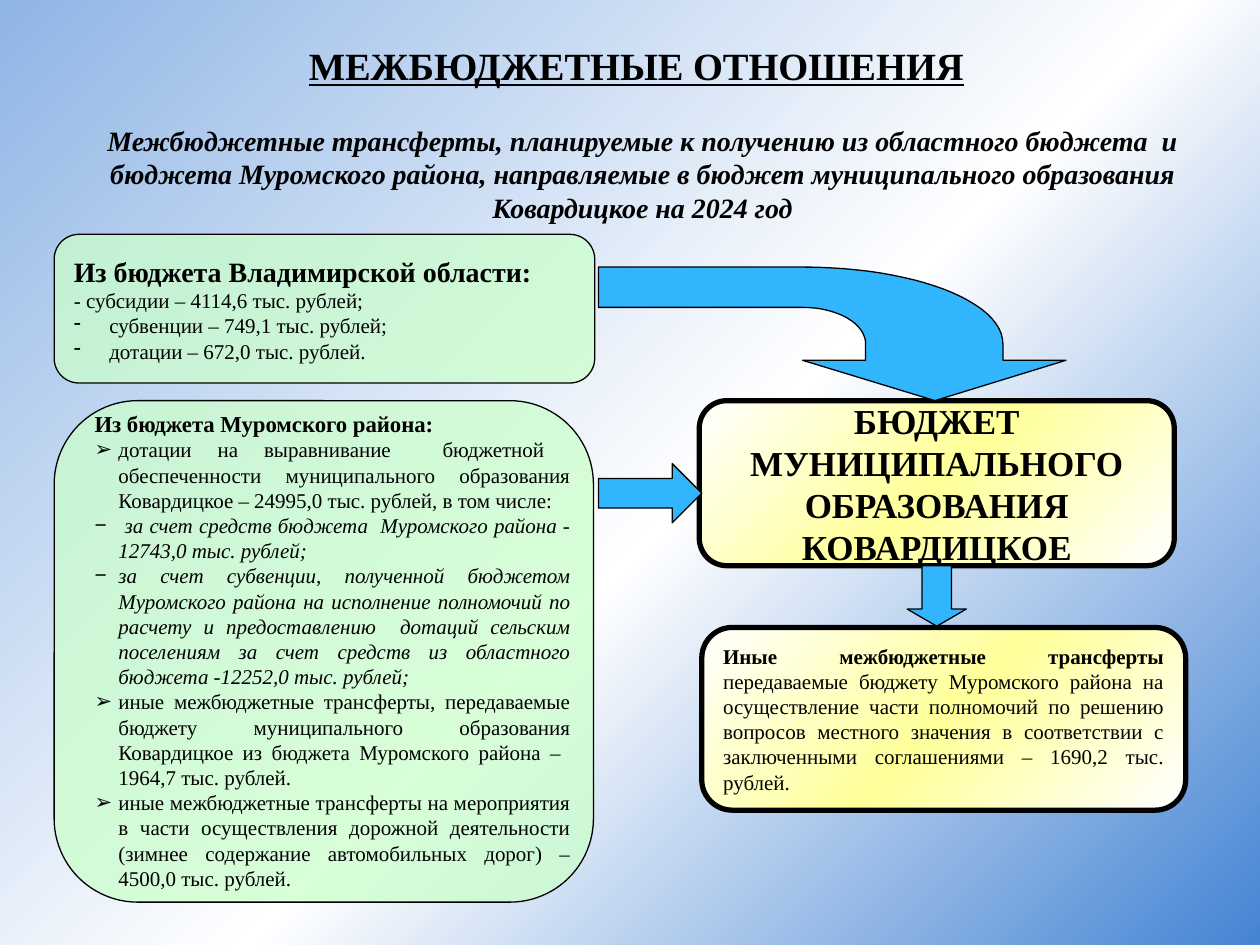
import copy
from dataclasses import dataclass

import pptx
import pptx.util
import pptx.dml.color
import pptx.enum.shapes
import pptx.enum.text
import pptx.oxml.ns
import pptx.oxml.xmlchemy

COLORS = {
    "ink": "000000", "arrow": "31B6FD", "mint": "CCFFCC", "white": "FFFFFF",
    "yellow": "FFFF99", "sky": "8FB5E5", "blue": "4584D3",
}
FONT = "Times New Roman"
COLUMNS, ROWS = 100, 75
CELL = pptx.util.Inches(10) // COLUMNS
PATH_STEPS = 100  # freeform units in one grid cell

SHAPE = pptx.enum.shapes.MSO_SHAPE
ALIGN = pptx.enum.text.PP_ALIGN
MIDDLE = pptx.enum.text.MSO_ANCHOR.MIDDLE
TOP = pptx.enum.text.MSO_ANCHOR.TOP


@dataclass
class Area:
    column: float
    row: float
    columns: float
    rows: float

    def emu(self) -> list[int]:
        return [round(v * CELL) for v in (self.column, self.row, self.columns, self.rows)]


@dataclass
class Para:
    runs: list[tuple[str, str]]  # text and style letters: b, i, u
    size: float = 12
    align: int = ALIGN.LEFT
    bullet: str = ""
    indent: float = 1.9  # grid columns


def rgb(name: str) -> pptx.dml.color.RGBColor:
    return pptx.dml.color.RGBColor.from_string(COLORS[name])


def write(frame, paras: list[Para], anchor=TOP) -> None:
    frame.word_wrap = True
    frame.auto_size = pptx.enum.text.MSO_AUTO_SIZE.NONE
    frame.vertical_anchor = anchor
    for index, para in enumerate(paras):
        line = frame.add_paragraph() if index else frame.paragraphs[0]
        line.alignment = para.align
        line.space_before = pptx.util.Pt(0)
        set_bullet(line, para)
        for text, style in para.runs:
            run = line.add_run()
            run.text = text
            run.font.name, run.font.size = FONT, pptx.util.Pt(para.size)
            run.font.bold, run.font.italic = "b" in style, "i" in style
            run.font.underline = "u" in style
            run.font.color.rgb = rgb("ink")


def set_bullet(line, para: Para) -> None:
    props = line._p.get_or_add_pPr()
    margin = round(para.indent * CELL) if para.bullet else 0
    props.set("marL", str(margin))
    props.set("indent", str(-margin))
    mark = pptx.oxml.xmlchemy.OxmlElement("a:buChar" if para.bullet else "a:buNone")
    if para.bullet:
        mark.set("char", para.bullet)
    props.append(mark)


def fill_gradient(fill, element, names: list[str], middle: float) -> None:
    """Three-stop diagonal gradient."""
    fill.gradient()
    fill.gradient_angle = 315
    first = next(element.iter(pptx.oxml.ns.qn("a:gs")))
    first.addnext(copy.deepcopy(first))
    for stop, name, position in zip(fill.gradient_stops, names, (0, middle, 1)):
        stop.color.rgb, stop.position = rgb(name), position


def fill_solid(shape, name: str, opacity: int = 100) -> None:
    shape.fill.solid()
    shape.fill.fore_color.rgb = rgb(name)
    if opacity < 100:
        color = next(shape.element.iter(pptx.oxml.ns.qn("a:srgbClr")))
        alpha = pptx.oxml.xmlchemy.OxmlElement("a:alpha")
        alpha.set("val", str(opacity * 1000))
        color.append(alpha)


def outline(shape, width: float) -> None:
    shape.shadow.inherit = False
    shape.line.color.rgb = rgb("ink")
    shape.line.width = pptx.util.Pt(width)


def add_source(slide, area: Area):
    card = slide.shapes.add_shape(SHAPE.FLOWCHART_ALTERNATE_PROCESS, *area.emu())
    fill_solid(card, "mint", 74)
    outline(card, 0.75)
    return card


def add_budget(slide, area: Area, para: Para) -> None:
    card = slide.shapes.add_shape(SHAPE.FLOWCHART_ALTERNATE_PROCESS, *area.emu())
    fill_gradient(card.fill, card.element, ["white", "yellow", "white"], 0.5)
    outline(card, 3)
    write(card.text_frame, [para], MIDDLE)


def add_arrow(slide, kind, area: Area, head: float) -> None:
    arrow = slide.shapes.add_shape(kind, *area.emu())
    arrow.adjustments[0], arrow.adjustments[1] = 0.5, head
    fill_solid(arrow, "arrow")
    outline(arrow, 0.75)


def curve(start, control1, control2, end, steps: int = 24) -> list[tuple[float, float]]:
    def at(t: float, axis: int) -> float:
        u = 1 - t
        return (u**3 * start[axis] + 3 * u * u * t * control1[axis]
                + 3 * u * t * t * control2[axis] + t**3 * end[axis])
    return [(at(i / steps, 0), at(i / steps, 1)) for i in range(steps + 1)]


def add_bent_arrow(slide) -> None:
    outer = curve((79.6, 27.3), (79.6, 23.9), (72.5, 21.2), (63.7, 21.2))
    inner = curve((63.7, 24.4), (66.5, 24.4), (68.7, 25.7), (68.7, 27.3))
    points = [(74.2, 31.8), (84.6, 28.6), (79.6, 28.6), *outer, (47.5, 21.2),
              (47.5, 24.4), *inner, (68.7, 28.6), (63.7, 28.6)]
    scaled = [(x * PATH_STEPS, y * PATH_STEPS) for x, y in points]
    builder = slide.shapes.build_freeform(*scaled[0], scale=CELL / PATH_STEPS)
    builder.add_line_segments(scaled[1:], close=True)
    arrow = builder.convert_to_shape()
    fill_solid(arrow, "arrow")
    outline(arrow, 0.75)


HEADING = Para([("МЕЖБЮДЖЕТНЫЕ ОТНОШЕНИЯ", "bu")], 22, ALIGN.CENTER)
SUBTITLE = Para([("Межбюджетные трансферты, планируемые к получению из областного бюджета  и "
                  "бюджета Муромского района, направляемые в бюджет муниципального образования "
                  "Ковардицкое на 2024 год", "bi")], 16, ALIGN.CENTER)
REGION = [
    Para([("Из бюджета Владимирской области:", "b")], 16),
    Para([("- субсидии – 4114,6 тыс. рублей;", "")]),
    Para([(" субвенции – 749,1 тыс. рублей;", "")], bullet="-", indent=2.4),
    Para([(" дотации – 672,0 тыс. рублей.", "")], bullet="-", indent=2.4),
]
DISTRICT_ITEMS = [
    ("➢", [("дотации на выравнивание  бюджетной  обеспеченности муниципального образования "
            "Ковардицкое – 24995,0 тыс. рублей, в том числе: ", "")]),
    ("−", [(" ", ""), ("за счет средств бюджета  Муромского района - 12743,0 тыс. рублей;", "i")]),
    ("−", [("за счет субвенции, полученной бюджетом Муромского района на исполнение полномочий "
            "по расчету и предоставлению  дотаций сельским поселениям за счет средств из "
            "областного бюджета -12252,0 тыс. рублей;", "i")]),
    ("➢", [("иные межбюджетные трансферты, передаваемые бюджету муниципального образования "
            "Ковардицкое из бюджета Муромского района –  1964,7 тыс. рублей.", "")]),
    ("➢", [("иные межбюджетные трансферты на мероприятия в части осуществления дорожной "
            "деятельности (зимнее содержание автомобильных дорог) – 4500,0 тыс. рублей.", "")]),
]
DISTRICT = [Para([("Из бюджета Муромского района:", "b")], 13)] + [
    Para(runs, align=ALIGN.JUSTIFY, bullet=mark) for mark, runs in DISTRICT_ITEMS]
MUNICIPAL = Para([("БЮДЖЕТ МУНИЦИПАЛЬНОГО ОБРАЗОВАНИЯ КОВАРДИЦКОЕ", "b")], 20, ALIGN.CENTER)
TRANSFERS = Para([("Иные межбюджетные трансферты ", "b"),
                  ("передаваемые бюджету Муромского района на осуществление части полномочий "
                   "по решению вопросов местного значения в соответствии с заключенными "
                   "соглашениями – 1690,2 тыс. рублей.", "")], align=ALIGN.JUSTIFY)


def main() -> None:
    deck = pptx.Presentation()
    deck.slide_width, deck.slide_height = COLUMNS * CELL, ROWS * CELL
    slide = deck.slides.add_slide(deck.slide_layouts[1])
    fill_gradient(slide.background.fill, slide.element, ["sky", "white", "blue"], 0.54)

    # Heading and subtitle
    heading, district = slide.placeholders
    heading.left, heading.top, heading.width, heading.height = Area(5.5, 2.8, 90, 4.7).emu()
    write(heading.text_frame, [HEADING], MIDDLE)
    subtitle = slide.shapes.add_textbox(*Area(6.5, 9.3, 89, 9.1).emu())
    write(subtitle.text_frame, [SUBTITLE])

    # Sources of transfers
    region = add_source(slide, Area(4.3, 18.6, 42.9, 11.8))
    write(region.text_frame, REGION, MIDDLE)
    district_card = add_source(slide, Area(4.3, 31.8, 42.8, 39.8))
    district.left, district.top, district.width, district.height = Area(6.5, 32, 39.8, 39.5).emu()
    write(district.text_frame, DISTRICT)
    district_card.element.addnext(district.element)

    # Receiving budget and transfers passed on
    add_budget(slide, Area(55.5, 31.8, 37.7, 13.1), MUNICIPAL)
    add_budget(slide, Area(55.7, 49.8, 38.4, 14.5), TRANSFERS)

    # Flow arrows
    add_bent_arrow(slide)
    add_arrow(slide, SHAPE.DOWN_ARROW, Area(72, 44.9, 4.7, 4.8), 0.29)
    add_arrow(slide, SHAPE.RIGHT_ARROW, Area(47.5, 36.8, 8.2, 4.7), 0.5)

    deck.save("out.pptx")


if __name__ == "__main__":
    main()
